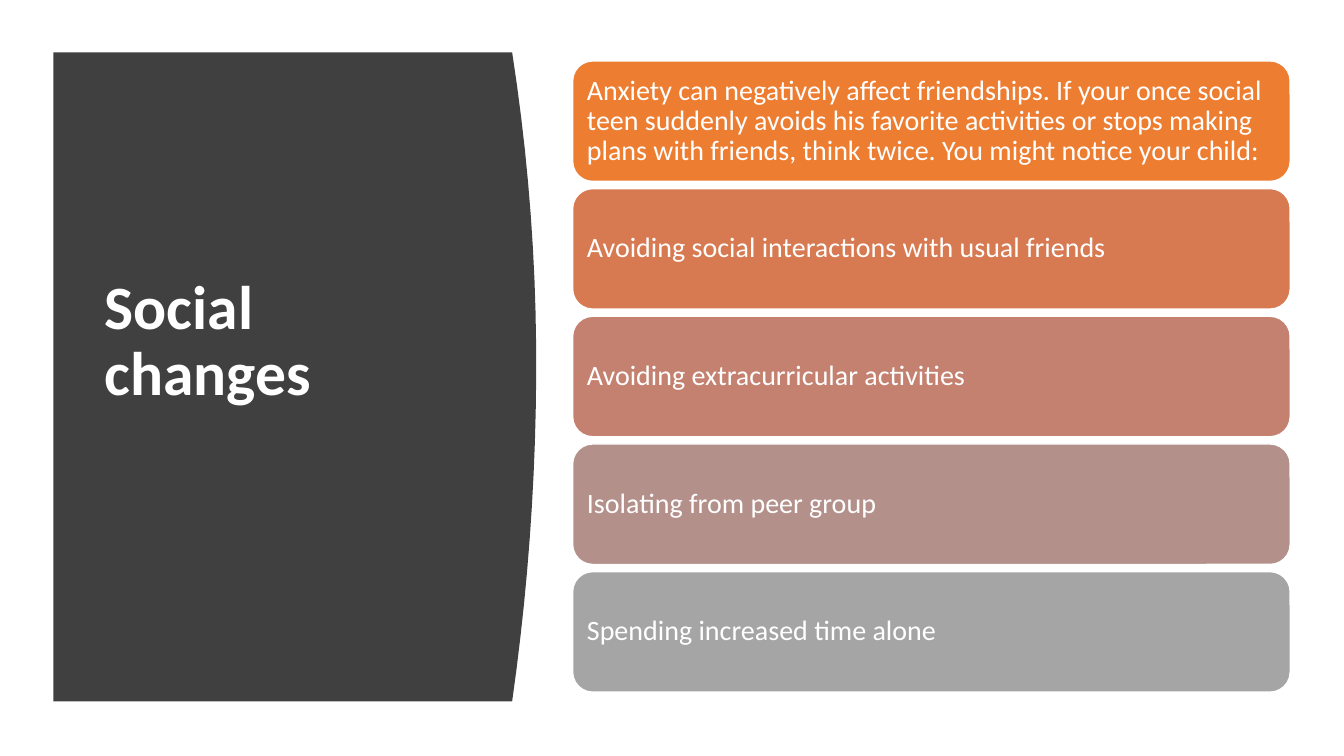
from typing import NamedTuple

from pptx import Presentation
from pptx.dml.color import RGBColor
from pptx.enum.shapes import MSO_SHAPE
from pptx.enum.text import MSO_ANCHOR, MSO_AUTO_SIZE, PP_ALIGN
from pptx.slide import Slide
from pptx.text.text import TextFrame
from pptx.util import Pt

ROUNDED = MSO_SHAPE.ROUNDED_RECTANGLE
MIDDLE = MSO_ANCHOR.MIDDLE
LEFT = PP_ALIGN.LEFT
NO_FIT = MSO_AUTO_SIZE.NONE

WHITE = RGBColor(0xFF, 0xFF, 0xFF)
CHARCOAL = RGBColor(0x40, 0x40, 0x40)
ORANGE = RGBColor(0xED, 0x7D, 0x31)
TERRACOTTA = RGBColor(0xD8, 0x7A, 0x51)
ROSE = RGBColor(0xC4, 0x81, 0x70)
MAUVE = RGBColor(0xB4, 0x90, 0x8B)
GREY = RGBColor(0xA5, 0xA5, 0xA5)

FONT = "Calibri"
PANEL_LEFT, PANEL_TOP, PANEL_BOTTOM = 38.2, 37.4, 501
PANEL_EDGE, PANEL_BULGE, BULGE_Y = 365.8, 383, 259.2
CURVE_STEPS = 20
CARD_LEFT, CARD_TOP, CARD_WIDTH, CARD_HEIGHT = 409, 43.5, 512.6, 86.1
CARD_PITCH = 91.2


class Card(NamedTuple):
    text: str
    color: RGBColor


CARDS = [
    Card("Anxiety can negatively affect friendships. If your once social teen "
         "suddenly avoids his favorite activities or stops making plans with "
         "friends, think twice. You might notice your child:", ORANGE),
    Card("Avoiding social interactions with usual friends", TERRACOTTA),
    Card("Avoiding extracurricular activities", ROSE),
    Card("Isolating from peer group", MAUVE),
    Card("Spending increased time alone", GREY),
]


def write_text(frame: TextFrame, text: str, size: float, bold: bool) -> None:
    frame.text = text
    frame.word_wrap = True
    frame.auto_size = NO_FIT
    frame.vertical_anchor = MIDDLE
    paragraph = frame.paragraphs[0]
    paragraph.alignment = LEFT
    paragraph.line_spacing = 0.9
    paragraph.font.name = FONT
    paragraph.font.size = Pt(size)
    paragraph.font.bold = bold
    paragraph.font.color.rgb = WHITE


def bulge_x(y: float) -> float:
    """Horizontal place of the panel's parabolic right edge at height y."""
    half = BULGE_Y - PANEL_TOP if y < BULGE_Y else PANEL_BOTTOM - BULGE_Y
    return PANEL_BULGE - (PANEL_BULGE - PANEL_EDGE) * ((y - BULGE_Y) / half) ** 2


def draw_panel(slide: Slide) -> None:
    step = (PANEL_BOTTOM - PANEL_TOP) / CURVE_STEPS
    heights = [PANEL_TOP + i * step for i in range(CURVE_STEPS + 1)]
    edge = [(Pt(bulge_x(y)), Pt(y)) for y in heights]
    outline = slide.shapes.build_freeform(Pt(PANEL_LEFT), Pt(PANEL_TOP))
    outline.add_line_segments(edge + [(Pt(PANEL_LEFT), Pt(PANEL_BOTTOM))])
    panel = outline.convert_to_shape()
    panel.shadow.inherit = False
    panel.fill.solid()
    panel.fill.fore_color.rgb = CHARCOAL
    panel.line.fill.background()


def place_title(slide: Slide) -> None:
    title = slide.shapes.title
    title.left, title.top = Pt(67.7), Pt(79.9)
    title.width, title.height = Pt(269.3), Pt(377.3)
    write_text(title.text_frame, "Social changes", 44, True)
    # The deep bottom margin lifts the words above the middle of the panel.
    title.text_frame.margin_bottom = Pt(51.6)
    # Bring the title in front of the panel.
    slide.shapes[-1].element.addnext(title.element)


def draw_card(slide: Slide, card: Card, top: float) -> None:
    box = slide.shapes.add_shape(
        ROUNDED, Pt(CARD_LEFT), Pt(top), Pt(CARD_WIDTH), Pt(CARD_HEIGHT))
    box.shadow.inherit = False
    box.fill.solid()
    box.fill.fore_color.rgb = card.color
    box.line.color.rgb = WHITE
    box.line.width = Pt(1)
    frame = box.text_frame
    write_text(frame, card.text, 20, False)
    # The preset itself insets its text by about 4 points.
    frame.margin_left = frame.margin_right = Pt(6)
    frame.margin_top = frame.margin_bottom = Pt(6)


def main() -> None:
    deck = Presentation()
    deck.slide_width, deck.slide_height = Pt(960), Pt(540)
    slide = deck.slides.add_slide(deck.slide_layouts.get_by_name("Title Only"))
    draw_panel(slide)
    place_title(slide)
    for row, card in enumerate(CARDS):
        draw_card(slide, card, CARD_TOP + row * CARD_PITCH)
    deck.save("out.pptx")


if __name__ == "__main__":
    main()
